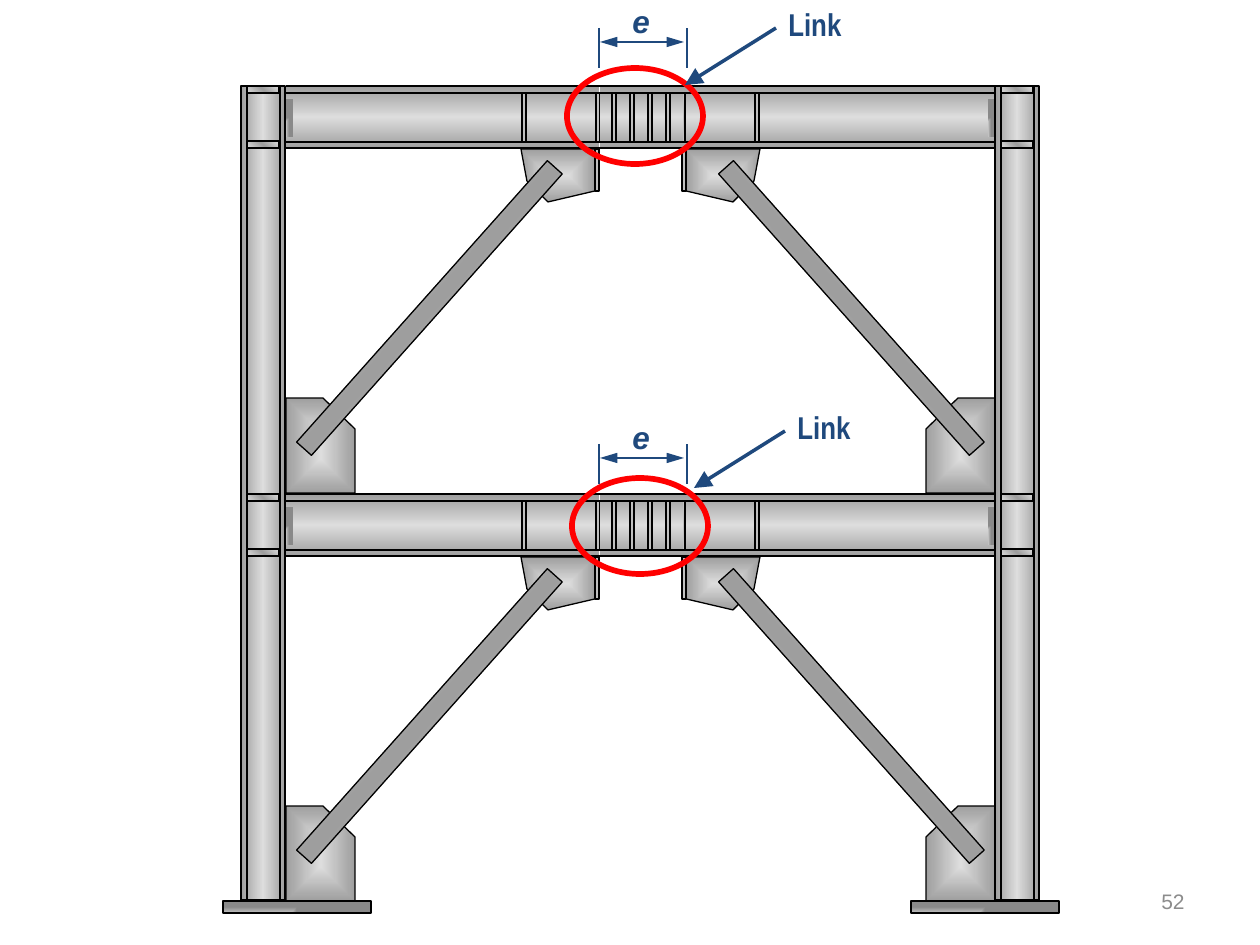
"""Build a slide of a two-storey eccentrically braced frame with its links marked."""
from lxml import etree
from pptx import Presentation
from pptx import util as u
from pptx.dml.color import RGBColor
from pptx.enum import shapes, text
from pptx.oxml import parse_xml
from pptx.oxml.ns import qn

PX = u.Inches(1) / 126
BLACK = RGBColor(0x00, 0x00, 0x00)
SILVER = RGBColor(0xC0, 0xC0, 0xC0)
NAVY = RGBColor(0x1F, 0x49, 0x7D)
RED = RGBColor(0xFF, 0x00, 0x00)
GREY = RGBColor(0x8C, 0x8C, 0x8C)
EDGE, SHINE, SHADE = (RGBColor(0x9E, 0x9E, 0x9E), RGBColor(0xDD, 0xDD, 0xDD),
                      RGBColor(0x89, 0x89, 0x89))
CENTRE = '<a:path path="rect"><a:fillToRect l="50000" t="50000" r="50000" b="50000"/></a:path>'
CORNER = '<a:path path="rect"><a:fillToRect t="100000" r="100000"/></a:path>'
ANGLE = '<a:lin ang="{}" scaled="1"/>'
BEAM = ([EDGE, SHINE, EDGE], ANGLE.format(5400000))
COLUMN = ([EDGE, SHINE, EDGE], ANGLE.format(0))
BRACE = ([SHINE, EDGE, SHINE], ANGLE.format(5400000))
STIFFENER = ([SHINE, EDGE, SHINE], ANGLE.format(18900000))
GUSSET = ([SHINE, EDGE], CENTRE)
PLATE = ([SILVER, SHADE], CORNER)
RECT = shapes.MSO_SHAPE.RECTANGLE
MIRROR = 1281
STOREYS = (86, 494)


def style(sp, fill, width, color=BLACK):
    sp.shadow.inherit = False
    if fill is None:
        sp.fill.background()
    elif isinstance(fill, RGBColor):
        sp.fill.solid()
        sp.fill.fore_color.rgb = fill
    else:
        colors, direction = fill
        stops = "".join(
            f'<a:gs pos="{100000 * i // (len(colors) - 1)}"><a:srgbClr val="{c}"/></a:gs>'
            for i, c in enumerate(colors))
        sp.fill.gradient()
        grad = sp._element.spPr.find(qn("a:gradFill"))
        grad.getparent().replace(grad, parse_xml(
            '<a:gradFill xmlns:a="http://schemas.openxmlformats.org/drawingml/2006/main" '
            f'rotWithShape="1"><a:gsLst>{stops}</a:gsLst>{direction}</a:gradFill>'))
    if width:
        sp.line.color.rgb = color
        sp.line.width = u.Pt(width)
    else:
        sp.line.fill.background()


def add_line(group, x1, y1, x2, y2, width, color=BLACK, ends=(), head="med"):
    ln = group.add_connector(shapes.MSO_CONNECTOR.STRAIGHT,
                             *(round(v * PX) for v in (x1, y1, x2, y2)))
    ln.line.color.rgb = color
    ln.line.width = u.Pt(width)
    for end in ends:
        etree.SubElement(ln.line._get_or_add_ln(), qn(f"a:{end}"),
                         type="triangle", w=head, len="lg")
    etree.SubElement(ln._element.spPr, qn("a:effectLst"))


prs = Presentation()
prs.slide_width, prs.slide_height = round(1260 * PX), round(945 * PX)
s = prs.slides.add_slide(prs.slide_layouts[6])
frame = s.shapes.add_group_shape().shapes

lower_gusset = [(286, 312), (323, 312), (355, 343), (355, 407), (286, 407)]
upper_gusset = [(595, 105), (548, 116), (527, 95), (521, 63), (595, 63)]
bay = [
    (595, 63, 4, 42, SILVER, 1, 0),
    (286, 0, 313, 63, BEAM, 0, 0),
    (286, 13, 7, 38, PLATE, 0, 0),
    (596, 7, 4, 49, SILVER, 1, 0),
    (241, 212, 377, 20, BRACE, 0.75, 48.3),
    (522, 7, 4, 49, SILVER, 1, 0),
]
flanges = (0, 7, 56, 62)

for top in reversed(STOREYS):
    for flip in (True, False):
        for outline in (lower_gusset, upper_gusset):
            pts = [(MIRROR - x if flip else x, top + y) for x, y in outline]
            fb = frame.build_freeform(*pts[0], scale=PX)
            fb.add_line_segments(pts[1:], close=True)
            style(fb.convert_to_shape(), GUSSET, 0.75)
        for x, y, w, h, fill, width, tilt in bay:
            left = MIRROR - x - w if flip else x
            sp = frame.add_shape(RECT, *(round(v * PX) for v in (left, top + y, w, h)))
            style(sp, fill, width)
            sp.rotation = tilt if flip else -tilt
            if flip:
                sp._element.spPr.find(qn("a:xfrm")).set("flipH", "1")
        for y in flanges:
            x1, x2 = (MIRROR - 286, MIRROR - 599) if flip else (286, 599)
            add_line(frame, x1, top + y, x2, top + y, 1)
    sp = frame.add_shape(RECT, *(round(v * PX) for v in (600, top, 83, 63)))
    style(sp, BEAM, 0)
    for y in flanges:
        add_line(frame, 599, top + y, 683, top + y, 1)
    for i in range(4):
        sp = frame.add_shape(RECT, *(round(v * PX) for v in (612 + 18 * i, top + 7, 4, 49)))
        style(sp, SILVER, 1)

for left, base in ((241, 223), (995, 911)):
    sp = frame.add_shape(RECT, *(round(v * PX) for v in (left, 86, 44, 814)))
    style(sp, COLUMN, 0.75)
    for x in (left + 6, left + 39):
        add_line(frame, x, 86, x, 900, 1.25)
    for top in STOREYS:
        for y in (top, top + 55):
            sp = frame.add_shape(RECT, *(round(v * PX) for v in (left + 6, y, 32, 7)))
            style(sp, STIFFENER, 0.75)
    sp = frame.add_shape(RECT, *(round(v * PX) for v in (base, 901, 148, 12)))
    style(sp, PLATE, 0.75)

labels = []
for y in (28, 444):
    dim = s.shapes.add_group_shape().shapes
    add_line(dim, 599, y, 599, y + 40, 1.5, NAVY)
    add_line(dim, 600, y + 14, 684, y + 14, 1.5, NAVY, ("headEnd", "tailEnd"))
    add_line(dim, 687, y + 40, 687, y, 1.5, NAVY)
    labels.append((dim, (620, y - 32, 42, 50), "e", "Arial", 18, NAVY))

for x, y in ((567, 68), (572, 478)):
    sp = s.shapes.add_shape(shapes.MSO_SHAPE.OVAL, *(round(v * PX) for v in (x, y, 136, 96)))
    style(sp, None, 3.25, RED)

for x, y in ((776, 28), (785, 431)):
    add_line(s.shapes, x, y, x - 91, y + 57, 2, NAVY, ("tailEnd",), "lg")
    labels.append((s.shapes, (x, y - 29, 166, 63), "Link", "Arial Narrow", 18, NAVY))
labels.append((s.shapes, (903, 876, 294, 50), "52", "Arial", 12, GREY))

for parent, box, words, font, size, color in labels:
    tf = parent.add_textbox(*(round(v * PX) for v in box)).text_frame
    tf.word_wrap = True
    p = tf.paragraphs[0]
    r = p.add_run()
    r.text = words
    r.font.name, r.font.size, r.font.color.rgb = font, u.Pt(size), color
    r.font.bold = color == NAVY
    r.font.italic = words == "e"
    if color == GREY:
        tf.vertical_anchor = text.MSO_ANCHOR.MIDDLE
        p.alignment = text.PP_ALIGN.RIGHT

prs.save("out.pptx")
